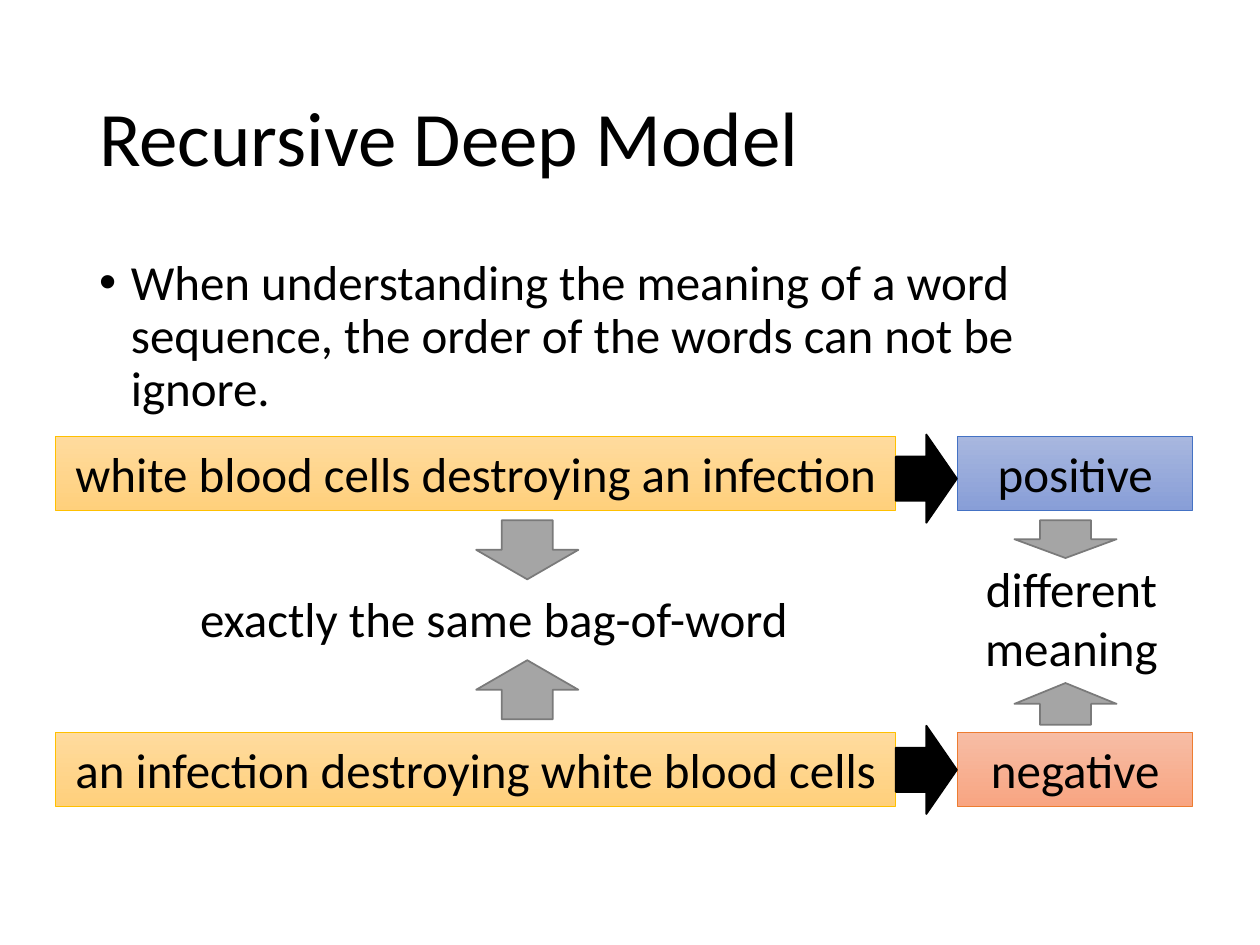
from lxml import etree
from pptx import Presentation
from pptx import util as u
from pptx.dml.color import RGBColor
from pptx.enum import shapes, text
from pptx.oxml.ns import qn

KIND = shapes.MSO_SHAPE
MID = text.MSO_ANCHOR.MIDDLE
TOP = text.MSO_ANCHOR.TOP
LEFT = text.PP_ALIGN.LEFT
MIDST = text.PP_ALIGN.CENTER

GOLD = ("FFDB9E", "FFD07C", "FFC000")
BLUE = ("A8B7DF", "889ED7", "4472C4")
RED = ("F7BDA5", "F8A582", "ED7D31")


def hue(code):
    return RGBColor.from_string(code)


def place(box):
    return [u.Cm(n) for n in box]


def write(shape, words, size=28, align=MIDST, anchor=MID, space=None, before=0):
    frame = shape.text_frame
    frame.word_wrap = True
    frame.vertical_anchor = anchor
    frame.text = words
    for par in frame.paragraphs:
        par.alignment = align
        par.line_spacing = space
        par.space_before = u.Pt(before)
        for run in par.runs:
            run.font.name = "Calibri"
            run.font.size = u.Pt(size)
            run.font.color.rgb = hue("000000")
    return frame


def label(slide, words, box, **form):
    return write(slide.shapes.add_textbox(*place(box)), words, **form)


def bullet(par, indent):
    props = par._p.get_or_add_pPr()
    props.set("marL", str(indent))
    props.set("indent", str(-indent))
    font = etree.SubElement(props, qn("a:buFont"))
    font.set("typeface", "Arial")
    etree.SubElement(props, qn("a:buChar")).set("char", "•")


def solid(slide, kind, box, edge, width):
    shape = slide.shapes.add_shape(kind, *place(box))
    shape.shadow.inherit = False
    shape.line.color.rgb = hue(edge)
    shape.line.width = u.Pt(width)
    return shape


def panel(slide, words, box, tint):
    """Add a captioned box shaded from top to bottom."""
    start, end, edge = tint
    shape = solid(slide, KIND.RECTANGLE, box, edge, 0.5)
    shape.fill.gradient()
    shape.fill.gradient_angle = 270
    for stop, code in zip(shape.fill.gradient_stops, (start, end)):
        stop.color.rgb = hue(code)
    write(shape, words)


def arrow(slide, kind, box, fill, edge):
    shape = solid(slide, kind, box, edge, 1)
    shape.fill.solid()
    shape.fill.fore_color.rgb = hue(fill)


def main():
    deck = Presentation()
    deck.slide_width, deck.slide_height = u.Cm(25.4), u.Cm(19.05)
    slide = deck.slides.add_slide(deck.slide_layouts[6])

    label(slide, "Recursive Deep Model", (1.75, 1.02, 21.9, 3.68),
          size=44, align=LEFT, space=0.9)
    body = label(slide, "When understanding the meaning of a word sequence, "
                 "the order of the words can not be ignore.",
                 (1.75, 5.08, 21.9, 12.09),
                 align=LEFT, anchor=TOP, space=0.9, before=10)
    bullet(body.paragraphs[0], u.Cm(0.64))

    rows = (
        (8.79, 8.76, "white blood cells destroying an infection", "positive", BLUE),
        (14.76, 14.63, "an infection destroying white blood cells", "negative", RED),
    )
    for top, tip, phrase, mood, tint in rows:
        panel(slide, phrase, (1.12, top, 16.94, 1.5), GOLD)
        panel(slide, mood, (19.3, top, 4.75, 1.5), tint)
        arrow(slide, KIND.RIGHT_ARROW, (18.06, tip, 1.23, 1.78), "000000", "000000")

    label(slide, "exactly the same bag-of-word", (3.73, 11.73, 12.45, 1.45), anchor=TOP)
    label(slide, "different\nmeaning", (18.92, 11.13, 5.36, 2.64), anchor=TOP)

    for kind, left, top, high in (
        (KIND.DOWN_ARROW, 9.6, 10.49, 1.19),
        (KIND.UP_ARROW, 9.6, 13.31, 1.19),
        (KIND.DOWN_ARROW, 20.45, 10.49, 0.76),
        (KIND.UP_ARROW, 20.45, 13.77, 0.84),
    ):
        arrow(slide, kind, (left, top, 2.06, high), "A5A5A5", "7A7A7A")

    deck.save("out.pptx")


if __name__ == "__main__":
    main()
